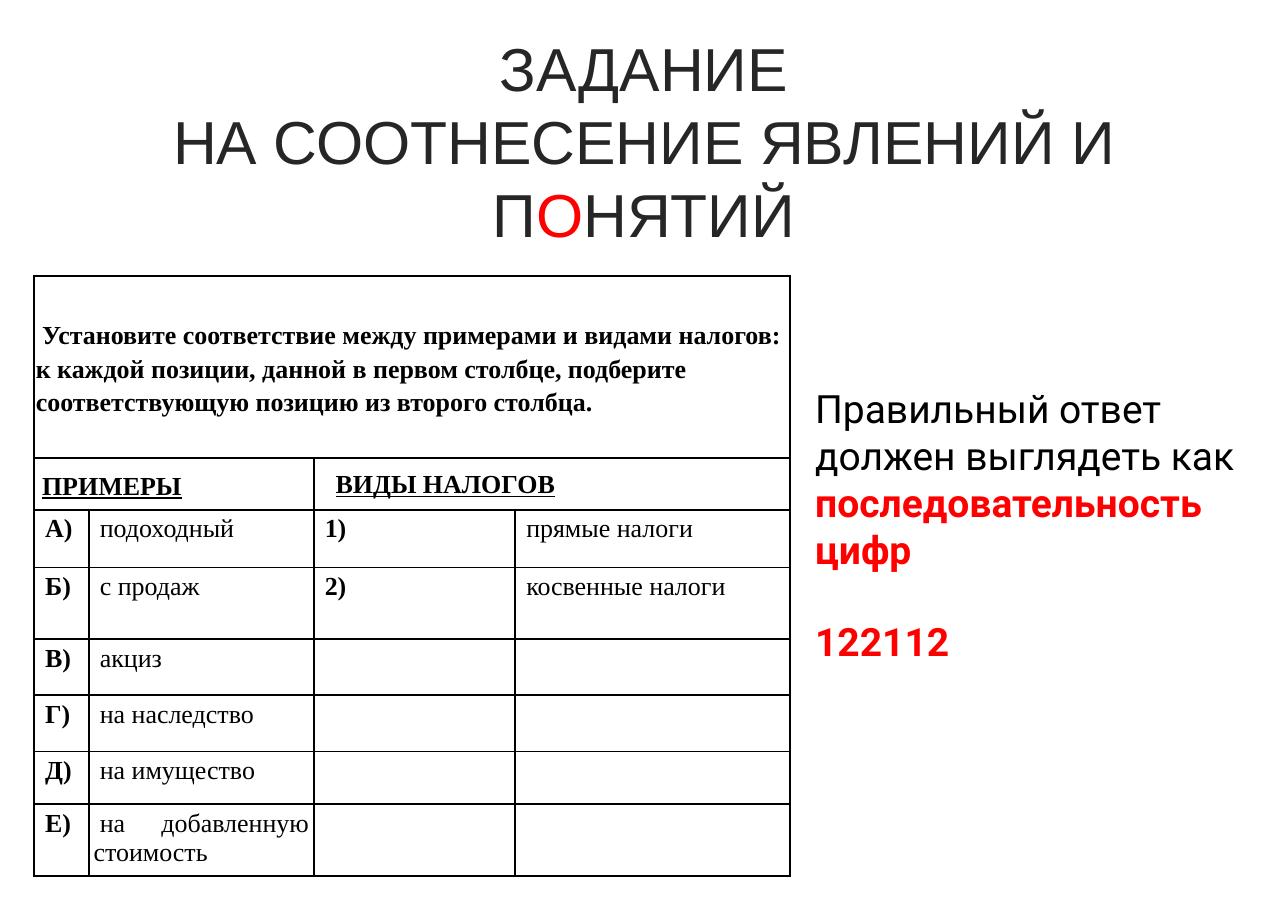
import pptx
import pptx.util
import pptx.dml.color
import pptx.enum.text
import pptx.oxml
import pptx.oxml.ns

Pt, Inches = pptx.util.Pt, pptx.util.Inches
RGB = pptx.dml.color.RGBColor
ALIGN = pptx.enum.text.PP_ALIGN
ANCHOR = pptx.enum.text.MSO_ANCHOR

BLACK = RGB(0, 0, 0)
DARK = RGB(0x26, 0x26, 0x26)
RED = RGB(0xFF, 0, 0)


class Sheet:
    """Style and current slide; places are in percent of the slide."""
    serif = "Times New Roman"
    size = 12
    indent = Inches(0.04)

    def __init__(self, deck):
        self.deck = deck
        self.slide = deck.slides.add_slide(deck.slide_layouts[6])

    def place(self, left, top, width, height):
        wide, high = self.deck.slide_width, self.deck.slide_height
        return [round(share * full / 100) for share, full in
                ((left, wide), (top, high), (width, wide), (height, high))]

    def font(self, par, name, size, color=None, bold=None):
        par.font.name, par.font.size, par.font.bold = name, Pt(size), bold
        if color is not None:
            par.font.color.rgb = color

    def text(self, box, pars, name, size, align=ALIGN.LEFT, gap=0, inset=0.05):
        """Each paragraph is a list of (text, colour, bold) runs."""
        frame = self.slide.shapes.add_textbox(*self.place(*box)).text_frame
        frame.word_wrap = True
        frame.margin_top = Inches(inset)
        for i, runs in enumerate(pars):
            par = frame.add_paragraph() if i else frame.paragraphs[0]
            par.alignment = align
            par.space_before = Pt(gap if i else 0)
            self.font(par, name, size)
            for words, color, bold in runs:
                run = par.add_run()
                run.text = words
                run.font.color.rgb, run.font.bold = color, bold

    def table(self, box, cols, rows):
        left, top, width, height = self.place(*box)
        grid = self.slide.shapes.add_table(
            len(rows), len(cols), left, top, width, height).table
        grid.first_row = grid.horz_banding = False
        for line, full, parts in ((grid.columns, width, cols),
                                  (grid.rows, height, rows)):
            for item, part in zip(line, parts):
                size = round(full * part / sum(parts))
                if line is grid.columns:
                    item.width = size
                else:
                    item.height = size
        for cell in grid.iter_cells():
            self.frame(cell)
            self.cell(cell, "", inset=0.01)
        return grid

    def frame(self, cell):
        props = cell._tc.get_or_add_tcPr()
        for side in ("lnL", "lnR", "lnT", "lnB"):
            props.append(pptx.oxml.parse_xml(
                f'<a:{side} {pptx.oxml.ns.nsdecls("a")} w="12700"><a:solidFill>'
                f'<a:srgbClr val="{BLACK}"/></a:solidFill></a:{side}>'))
        cell.fill.background()

    def cell(self, cell, words, bold=False, line=False, align=ALIGN.LEFT,
             inset=0.03, side=None, anchor=ANCHOR.TOP, space=1.0):
        cell.margin_top = cell.margin_bottom = Inches(inset)
        cell.margin_left = cell.margin_right = Inches(side or inset)
        cell.vertical_anchor = anchor
        par = cell.text_frame.paragraphs[0]
        par.text = words
        par.alignment, par.line_spacing = align, space
        self.font(par, self.serif, self.size, BLACK, bold)
        par.font.underline = line
        par._p.get_or_add_pPr().set("indent", str(self.indent))


def main():
    deck = pptx.Presentation()
    deck.slide_width, deck.slide_height = Inches(8.26), Inches(5.83)
    sheet = Sheet(deck)

    # Title
    sheet.text((0, 2.57, 100, 25.9), [
        [("ЗАДАНИЕ", DARK, False)],
        [("НА СООТНЕСЕНИЕ ЯВЛЕНИЙ И П", DARK, False), ("О", RED, False),
         ("НЯТИЙ", DARK, False)]], "Arial", 28, ALIGN.CENTER)

    # Answer
    sheet.text((62.1, 36.36, 37.9, 48.54), [
        [("Правильный ответ должен выглядеть как ", BLACK, False),
         ("последовательность цифр", RED, True)],
        [("122112", RED, True)]], "Roboto", 18, gap=21, inset=0.35)

    # Task table
    grid = sheet.table((2.66, 30.36, 58.7, 66.04), (0.35, 1.44, 1.29, 1.76),
                       (1.17, 0.33, 0.37, 0.46, 0.36, 0.36, 0.34, 0.46))
    for row, start, end in ((0, 0, 3), (1, 0, 1), (1, 2, 3)):
        grid.cell(row, start).merge(grid.cell(row, end))
    head = dict(bold=True, space=1.15, inset=0.01, anchor=ANCHOR.MIDDLE)
    sheet.cell(grid.cell(0, 0), "Установите соответствие между примерами и "
               "видами налогов: к каждой позиции, данной в первом столбце, "
               "подберите соответствующую позицию из второго столбца.", **head)
    sheet.cell(grid.cell(1, 0), "ПРИМЕРЫ", line=True, **head)
    sheet.cell(grid.cell(1, 2), "ВИДЫ НАЛОГОВ", bold=True, line=True,
               space=1.15, inset=0.05, side=0.1)

    # Examples and kinds of tax
    taxes = ("подоходный", "с продаж", "акциз", "на наследство",
             "на имущество", "на добавленную стоимость")
    kinds = ("прямые налоги", "косвенные налоги")
    marks = [f"{letter})" for letter in "АБВГДЕ"]
    for col, names, signs in ((0, taxes, marks), (2, kinds, ("1)", "2)"))):
        for row, (sign, name) in enumerate(zip(signs, names), 2):
            sheet.cell(grid.cell(row, col), sign, bold=True)
            sheet.cell(grid.cell(row, col + 1), name, align=ALIGN.JUSTIFY)

    deck.save("out.pptx")


if __name__ == "__main__":
    main()
